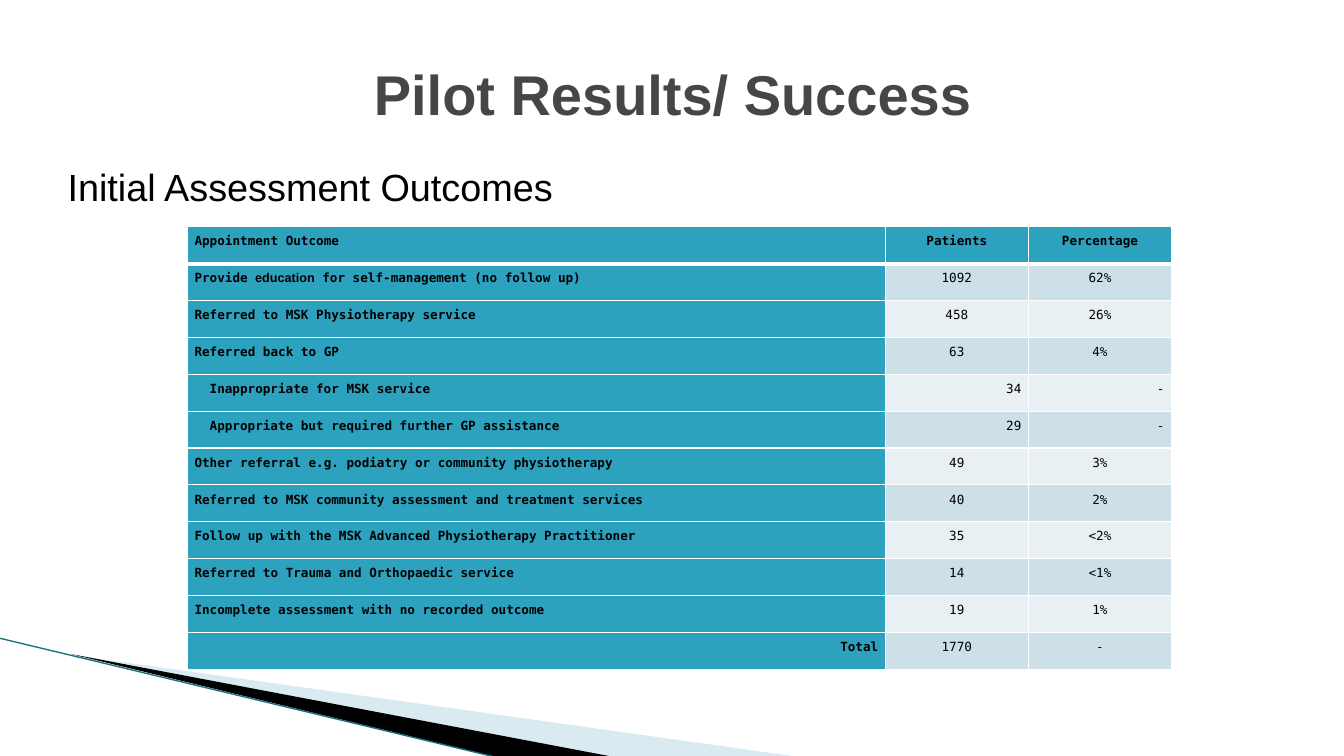
import pptx
import pptx.dml.color
import pptx.enum.shapes
import pptx.enum.text
import pptx.oxml
import pptx.oxml.ns
import pptx.util

# Content: label runs (text, font key), indent level, patients, percentage
TITLE = "Pilot Results/ Success"
SUBTITLE = "Initial Assessment Outcomes"
HEADER = ("Appointment Outcome", "Patients", "Percentage")
OUTCOMES = [
    ([("Provide ", "mono"), ("education", "sans"),
      (" for self-management (no follow up)", "mono")], 0, "1092", "62%"),
    ("Referred to MSK Physiotherapy service", 0, "458", "26%"),
    ("Referred back to GP", 0, "63", "4%"),
    ("Inappropriate for MSK service", 1, "34", "-"),
    ("Appropriate but required further GP assistance", 1, "29", "-"),
    ("Other referral e.g. podiatry or community physiotherapy", 0, "49", "3%"),
    ("Referred to MSK community assessment and treatment services", 0, "40", "2%"),
    ("Follow up with the MSK Advanced Physiotherapy Practitioner", 0, "35", "<2%"),
    ("Referred to Trauma and Orthopaedic service", 0, "14", "<1%"),
    ("Incomplete assessment with no recorded outcome", 0, "19", "1%"),
]
TOTAL = ("Total", "1770", "-")

# Look
FONTS = {"sans": "Arial", "mono": "DejaVu Sans Mono"}
COLORS = {"title": "464646", "text": "000000", "teal": "2DA2BF", "odd": "CDE0E8",
          "even": "E8F0F4", "border": "FFFFFF", "pale": "A0CBDC", "edge": "1B6E80"}
ALIGN = pptx.enum.text.PP_ALIGN

# Layout in inches
SLIDE = (13.33, 7.5)
TITLE_AREA = (0.67, 0.3, 12, 1.25)
BODY_AREA = (0.45, 1.57, 12, 4.9)
TABLE_AREA = (1.86, 2.25, 9.76, 4.39)
NUMBER_WIDTH = 1.42
COLUMNS = (TABLE_AREA[2] - 2 * NUMBER_WIDTH, NUMBER_WIDTH, NUMBER_WIDTH)
INDENT = 0.15
WEDGES = [
    ("pale", 40, [(0.73, 6.5), (7.93, 7.51), (6.08, 7.51)]),
    ("text", 100, [(0.71, 6.49), (6.09, 7.51), (4.96, 7.52)]),
]
EDGE = (-0.01, 6.33, 4.95, 7.52)


def inches(values):
    return [pptx.util.Inches(value) for value in values]


def rgb(name):
    return pptx.dml.color.RGBColor.from_string(COLORS[name])


def add_element(parent, tag, **attributes):
    element = pptx.oxml.parse_xml(f"<a:{tag} {pptx.oxml.ns.nsdecls('a')}/>")
    for key, value in attributes.items():
        element.set(key, str(value))
    parent.append(element)
    return element


def add_run(para, text, font, size, color, bold=False):
    span = para.add_run()
    span.text = text
    span.font.name = FONTS[font]
    span.font.size = pptx.util.Pt(size)
    span.font.bold = bold
    span.font.color.rgb = rgb(color)


def add_wedge(page, color, opacity, points):
    start, *others = [inches(point) for point in points]
    builder = page.shapes.build_freeform(*start)
    builder.add_line_segments(others, close=True)
    wedge = builder.convert_to_shape()
    wedge.shadow.inherit = False
    wedge.line.fill.background()
    wedge.fill.solid()
    wedge.fill.fore_color.rgb = rgb(color)
    if opacity < 100:
        tint = wedge.element.find(".//" + pptx.oxml.ns.qn("a:srgbClr"))
        add_element(tint, "alpha", val=opacity * 1000)


def place(shape, area, anchor):
    shape.left, shape.top, shape.width, shape.height = inches(area)
    frame = shape.text_frame
    frame.word_wrap = True
    frame.auto_size = pptx.enum.text.MSO_AUTO_SIZE.NONE
    frame.vertical_anchor = anchor
    return frame.paragraphs[0]


def fill_cell(cell, runs, align, color, bold, top=1, bottom=1, level=0):
    cell.margin_left = cell.margin_right = pptx.util.Inches(0.07)
    cell.margin_top = cell.margin_bottom = 0
    properties = cell._tc.get_or_add_tcPr()
    for side, width in (("L", 1), ("R", 1), ("T", top), ("B", bottom)):
        border = add_element(properties, "ln" + side, w=pptx.util.Pt(width))
        paint = add_element(border, "solidFill")
        add_element(paint, "srgbClr", val=COLORS["border"])
    cell.fill.solid()
    cell.fill.fore_color.rgb = rgb(color)
    para = cell.text_frame.paragraphs[0]
    para.alignment = align
    para.line_spacing = 1.5
    para.space_after = pptx.util.Pt(10)
    if level:
        para._p.get_or_add_pPr().set("marL", str(pptx.util.Inches(level * INDENT)))
    for text, font in runs if isinstance(runs, list) else [(runs, "mono")]:
        add_run(para, text, font, 9, "text", bold)


def add_outcome_table(page):
    rows = len(OUTCOMES) + 2
    table = page.shapes.add_table(rows, len(COLUMNS), *inches(TABLE_AREA)).table
    for column, width in zip(table.columns, COLUMNS):
        column.width = pptx.util.Inches(width)
    for row in table.rows:
        row.height = pptx.util.Inches(TABLE_AREA[3] / rows)

    for col, text in enumerate(HEADER):
        align = ALIGN.CENTER if col else ALIGN.LEFT
        fill_cell(table.cell(0, col), text, align, "teal", True, bottom=3)

    body = [(label, ALIGN.LEFT, level, numbers) for label, level, *numbers in OUTCOMES]
    body.append((TOTAL[0], ALIGN.RIGHT, 0, TOTAL[1:]))
    for row, (label, align, level, numbers) in enumerate(body, 1):
        top = 3 if row == 1 else 1
        fill_cell(table.cell(row, 0), label, align, "teal", True, top, level=level)
        band = "odd" if row % 2 else "even"
        side = ALIGN.RIGHT if level else ALIGN.CENTER
        for col, number in enumerate(numbers, 1):
            fill_cell(table.cell(row, col), number, side, band, False, top)


def main():
    deck = pptx.Presentation()
    deck.slide_width, deck.slide_height = inches(SLIDE)
    page = deck.slides.add_slide(deck.slide_layouts[1])
    title, body = page.placeholders

    # Corner decoration
    for wedge in WEDGES:
        add_wedge(page, *wedge)
    edge = page.shapes.add_connector(
        pptx.enum.shapes.MSO_CONNECTOR.STRAIGHT, *inches(EDGE))
    edge.line.color.rgb = rgb("edge")
    edge.line.width = pptx.util.Pt(0.95)
    add_element(edge.element.spPr, "effectLst")

    # Heading and subheading, in front of the decoration
    for shape in (body, title):
        shape.element.getparent().append(shape.element)
    para = place(body, BODY_AREA, pptx.enum.text.MSO_ANCHOR.TOP)
    properties = para._p.get_or_add_pPr()
    properties.set("marL", str(pptx.util.Inches(0.12)))
    properties.set("indent", "0")
    add_element(properties, "buNone")
    para.space_before = pptx.util.Pt(0)
    add_run(para, SUBTITLE, "sans", 27, "text")
    para = place(title, TITLE_AREA, pptx.enum.text.MSO_ANCHOR.MIDDLE)
    para.alignment = ALIGN.CENTER
    add_run(para, TITLE, "sans", 40, "title", True)

    add_outcome_table(page)
    deck.save("out.pptx")


if __name__ == "__main__":
    main()
